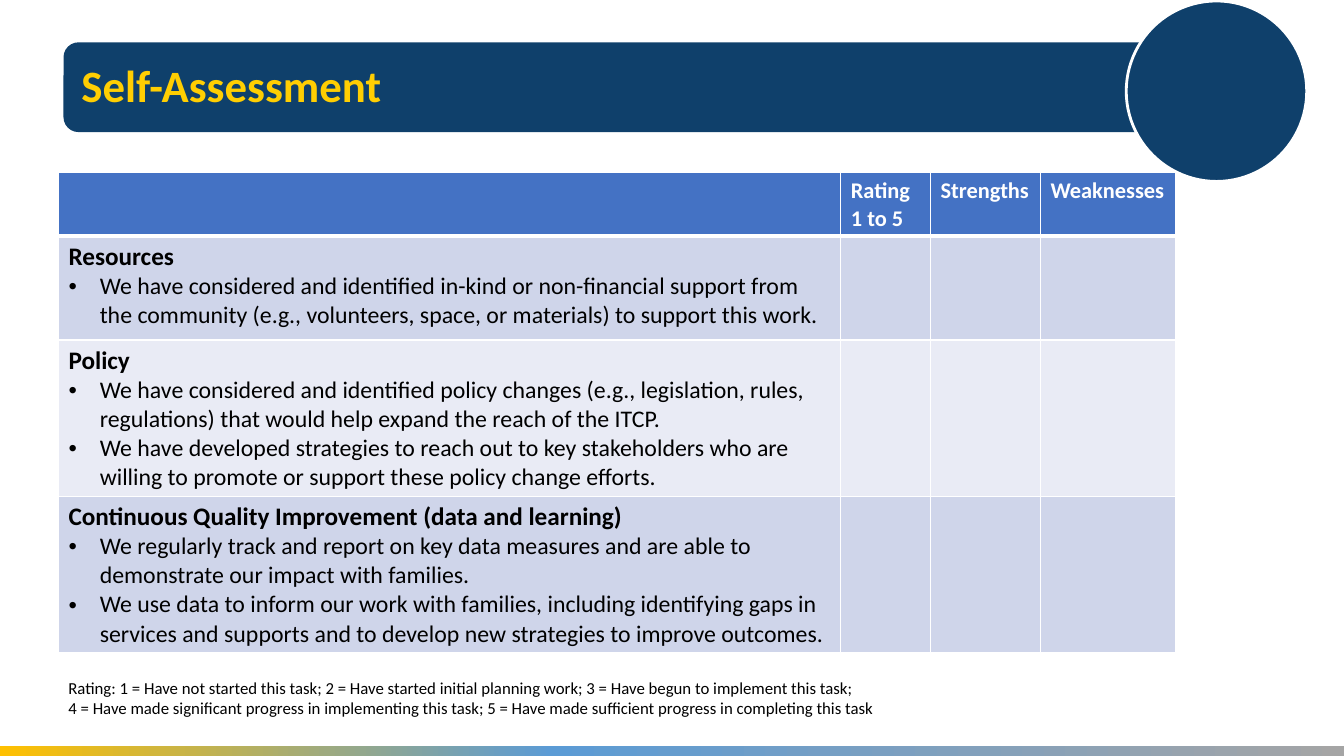
from lxml.etree import SubElement
from pptx import Presentation
from pptx.dml.color import RGBColor
from pptx.enum.shapes import MSO_SHAPE
from pptx.enum.text import MSO_ANCHOR
from pptx.oxml import parse_xml
from pptx.oxml.ns import nsdecls, qn
from pptx.util import Inches, Pt

FONT = "Calibri"
NAVY, YELLOW, WHITE, BLACK = "0F406B", "FFCE02", "FFFFFF", "000000"
HEADER_BLUE, BANDS = "4472C4", ("CFD5EA", "E9EBF5")
STRIP_STOPS = [(0, "FFC000"), (41, "5B9BD5"), (100, "A5A5A5")]

TITLE = "Self-Assessment"
HEADINGS = ["", "Rating\n1 to 5", "Strengths", "Weaknesses"]
TOPICS = [
    ("Resources", [
        "We have considered and identified in-kind or non-financial support from the community "
        "(e.g., volunteers, space, or materials) to support this work.",
    ]),
    ("Policy", [
        "We have considered and identified policy changes (e.g., legislation, rules, regulations) "
        "that would help expand the reach of the ITCP.",
        "We have developed strategies to reach out to key stakeholders who are willing to promote "
        "or support these policy change efforts.",
    ]),
    ("Continuous Quality Improvement (data and learning)", [
        "We regularly track and report on key data measures and are able to demonstrate our impact "
        "with families.",
        "We use data to inform our work with families, including identifying gaps in services and "
        "supports and to develop new strategies to improve outcomes.",
    ]),
]
RATING_KEY = (
    "Rating: 1 = Have not started this task; 2 = Have started initial planning work; "
    "3 = Have begun to implement this task;\n"
    "4 = Have made significant progress in implementing this task; "
    "5 = Have made sufficient progress in completing this task"
)
COLUMN_WIDTHS = [7.76, 0.89, 1.09, 1.34]
ROW_HEIGHTS = [0.61, 1.03, 1.55, 1.55]


def rgb(color):
    return RGBColor.from_string(color)


def style(paragraph, size, color, bold=False):
    font = paragraph.font
    font.name, font.size, font.bold = FONT, Pt(size), bold
    font.color.rgb = rgb(color)
    for run in paragraph.runs:
        run.font.name, run.font.size, run.font.bold = FONT, Pt(size), bold
        run.font.color.rgb = rgb(color)


def add_block(slide, preset, box, color):
    block = slide.shapes.add_shape(preset, *map(Inches, box))
    block.shadow.inherit = False
    block.fill.solid()
    block.fill.fore_color.rgb = rgb(color)
    block.line.fill.background()
    return block


def add_text(slide, box, text, size, color, bold=False):
    frame = slide.shapes.add_textbox(*map(Inches, box)).text_frame
    frame.word_wrap = True
    frame.text = text
    for paragraph in frame.paragraphs:
        style(paragraph, size, color, bold)
    return frame


def add_bullet(paragraph):
    properties = paragraph._p.get_or_add_pPr()
    properties.set("marL", str(Inches(0.31)))
    properties.set("indent", str(-Inches(0.31)))
    SubElement(properties, qn("a:buFont")).set("typeface", "Arial")
    SubElement(properties, qn("a:buChar")).set("char", "•")


def paint_cell(cell, color, bottom_width):
    properties = cell._tc.get_or_add_tcPr()
    for side, width in (("L", 1), ("R", 1), ("T", 1), ("B", bottom_width)):
        properties.append(parse_xml(
            f'<a:ln{side} {nsdecls("a")} w="{Pt(width)}"><a:solidFill>'
            f'<a:srgbClr val="{WHITE}"/></a:solidFill></a:ln{side}>'))
    cell.fill.solid()
    cell.fill.fore_color.rgb = rgb(color)


def add_strip(slide):
    strip = add_block(slide, MSO_SHAPE.RECTANGLE, (0, 7.4, 13.33, 0.1), STRIP_STOPS[0][1])
    strip.fill.gradient()
    strip.fill.gradient_angle = 0
    stops = strip._element.spPr.find(qn("a:gradFill")).find(qn("a:gsLst"))
    for stop in list(stops):
        stops.remove(stop)
    for position, color in STRIP_STOPS:
        stop = SubElement(stops, qn("a:gs"), pos=str(position * 1000))
        SubElement(stop, qn("a:srgbClr"), val=color)


def add_assessment(slide):
    box = (0.58, 1.71, sum(COLUMN_WIDTHS), sum(ROW_HEIGHTS))
    table = slide.shapes.add_table(
        len(ROW_HEIGHTS), len(COLUMN_WIDTHS), *map(Inches, box)).table
    for column, width in zip(table.columns, COLUMN_WIDTHS):
        column.width = Inches(width)
    for row_index, (row, height) in enumerate(zip(table.rows, ROW_HEIGHTS)):
        row.height = Inches(height)
        for cell in row.cells:
            if row_index == 0:
                paint_cell(cell, HEADER_BLUE, 3)
            else:
                paint_cell(cell, BANDS[(row_index - 1) % 2], 1)
    for column_index, heading in enumerate(HEADINGS):
        frame = table.cell(0, column_index).text_frame
        frame.text = heading
        for paragraph in frame.paragraphs:
            style(paragraph, 16, WHITE, True)
    for row_index, (topic, statements) in enumerate(TOPICS, 1):
        frame = table.cell(row_index, 0).text_frame
        frame.text = "\n".join([topic, *statements])
        topic_line, *statement_lines = frame.paragraphs
        style(topic_line, 18, BLACK, True)
        for line in statement_lines:
            add_bullet(line)
            style(line, 17, BLACK)


def main():
    deck = Presentation()
    deck.slide_width, deck.slide_height = Inches(13.33), Inches(7.5)
    slide = deck.slides.add_slide(deck.slide_layouts[6])
    add_strip(slide)
    add_block(slide, MSO_SHAPE.ROUNDED_RECTANGLE, (0.63, 0.42, 11.12, 0.89), NAVY)
    badge = add_block(slide, MSO_SHAPE.OVAL, (11.17, 0.01, 1.79, 1.79), NAVY)
    badge.line.color.rgb = rgb(WHITE)
    badge.line.width = Pt(2)
    title = add_text(slide, (0.71, 0.25, 9.33, 1.25), TITLE, 32, YELLOW, True)
    title.vertical_anchor = MSO_ANCHOR.MIDDLE
    title.paragraphs[0].line_spacing = 0.9
    add_assessment(slide)
    add_text(slide, (0.58, 6.67, 11.23, 0.5), RATING_KEY, 12, BLACK)
    deck.save("out.pptx")


if __name__ == "__main__":
    main()
